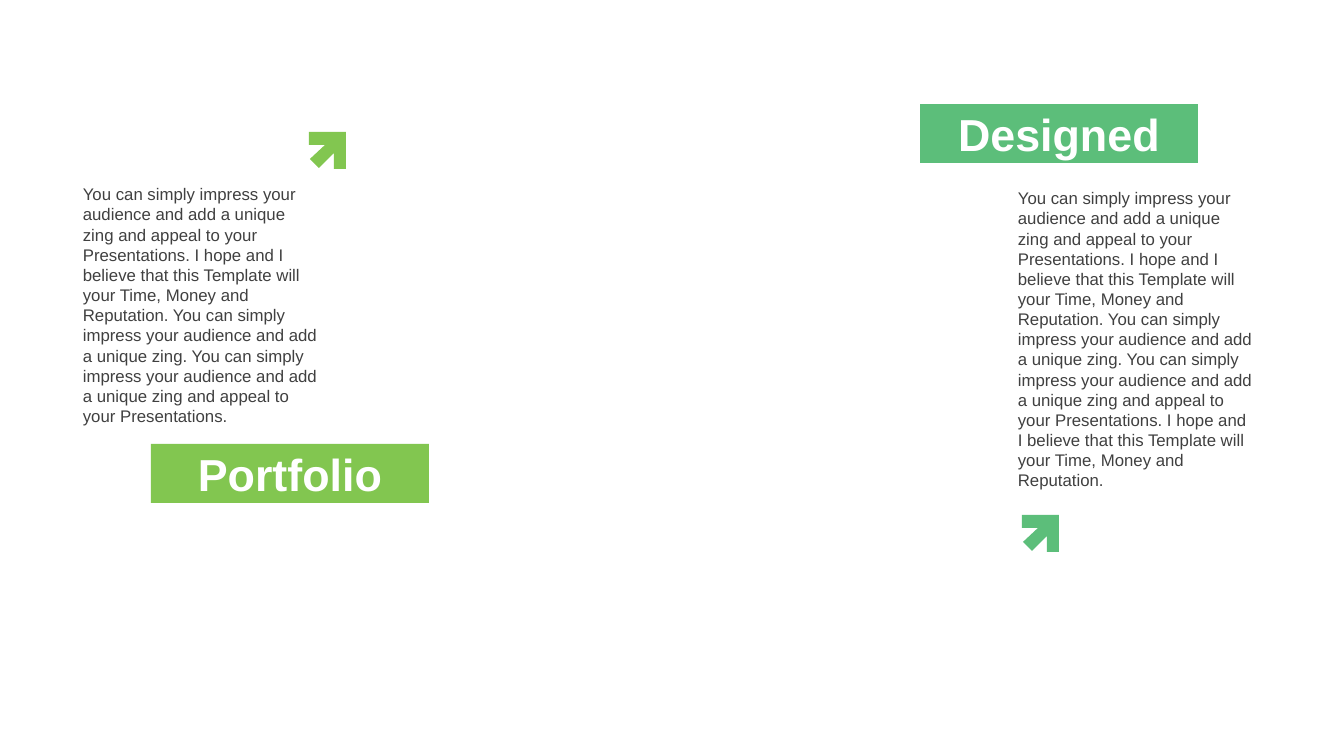
from pptx import Presentation
from pptx.dml.color import RGBColor
from pptx.enum.shapes import MSO_SHAPE
from pptx.enum.text import MSO_ANCHOR, MSO_AUTO_SIZE, PP_ALIGN
from pptx.util import Emu, Pt

PITCH = (
    "You can simply impress your audience and add a unique zing and appeal to your "
    "Presentations."
)
HOPE = (
    "I hope and I believe that this Template will your Time, Money and Reputation."
)
ZING = "You can simply impress your audience and add a unique zing."
STORY = [PITCH, HOPE, ZING, PITCH]

PANELS = [
    {
        "heading": "Designed",
        "story": STORY + [HOPE],
        "color": "5CBE7A",
        "heading_at": (920, 104),
        "arrow_at": (1022, 515),
        "story_at": (1008, 183),
        "story_height": 315,
    },
    {
        "heading": "Portfolio",
        "story": STORY,
        "color": "82C650",
        "heading_at": (151, 444),
        "arrow_at": (309, 132),
        "story_at": (73, 179),
        "story_height": 254,
    },
]
HEADING_SIZE = (278, 59)
STORY_WIDTH = 255
ARROW = [
    (0, 0), (37, 0), (37, 37), (25, 37), (25, 21),
    (10, 36), (1, 27), (16, 13), (0, 13),
]
SLIDE_SIZE = (1344, 756)
EMU_PER_PX = 914400 / 100.8


def px(*lengths):
    return [Emu(round(length * EMU_PER_PX)) for length in lengths]


def rgb(color):
    return RGBColor.from_string(color)


def paint(shape, color):
    shape.shadow.inherit = False
    shape.fill.solid()
    shape.fill.fore_color.rgb = rgb(color)
    shape.line.fill.background()


def write(frame, text, size, color, bold=False):
    frame.word_wrap = True
    paragraph = frame.paragraphs[0]
    paragraph.text = text
    font = paragraph.font
    font.name, font.size, font.bold = "Arial", Pt(size), bold
    font.color.rgb = rgb(color)
    return paragraph


def add_heading(slide, panel):
    heading = slide.shapes.add_shape(
        MSO_SHAPE.RECTANGLE, *px(*panel["heading_at"], *HEADING_SIZE)
    )
    paint(heading, panel["color"])
    frame = heading.text_frame
    frame.vertical_anchor = MSO_ANCHOR.MIDDLE
    write(frame, panel["heading"], 32, "FFFFFF", True).alignment = PP_ALIGN.CENTER


def add_arrow(slide, panel):
    left, top = panel["arrow_at"]
    corners = [(left + x, top + y) for x, y in ARROW]
    outline = slide.shapes.build_freeform(*corners[0], scale=EMU_PER_PX)
    outline.add_line_segments(corners[1:], close=True)
    paint(outline.convert_to_shape(), panel["color"])


def add_story(slide, panel):
    story = slide.shapes.add_textbox(
        *px(*panel["story_at"], STORY_WIDTH, panel["story_height"])
    )
    write(story.text_frame, " ".join(panel["story"]), 12, "404040")
    story.text_frame.auto_size = MSO_AUTO_SIZE.SHAPE_TO_FIT_TEXT


def main():
    deck = Presentation()
    deck.slide_width, deck.slide_height = px(*SLIDE_SIZE)
    slide = deck.slides.add_slide(deck.slide_layouts[6])
    for add_part in (add_heading, add_arrow, add_story):
        for panel in PANELS:
            add_part(slide, panel)
    deck.save("out.pptx")


if __name__ == "__main__":
    main()
